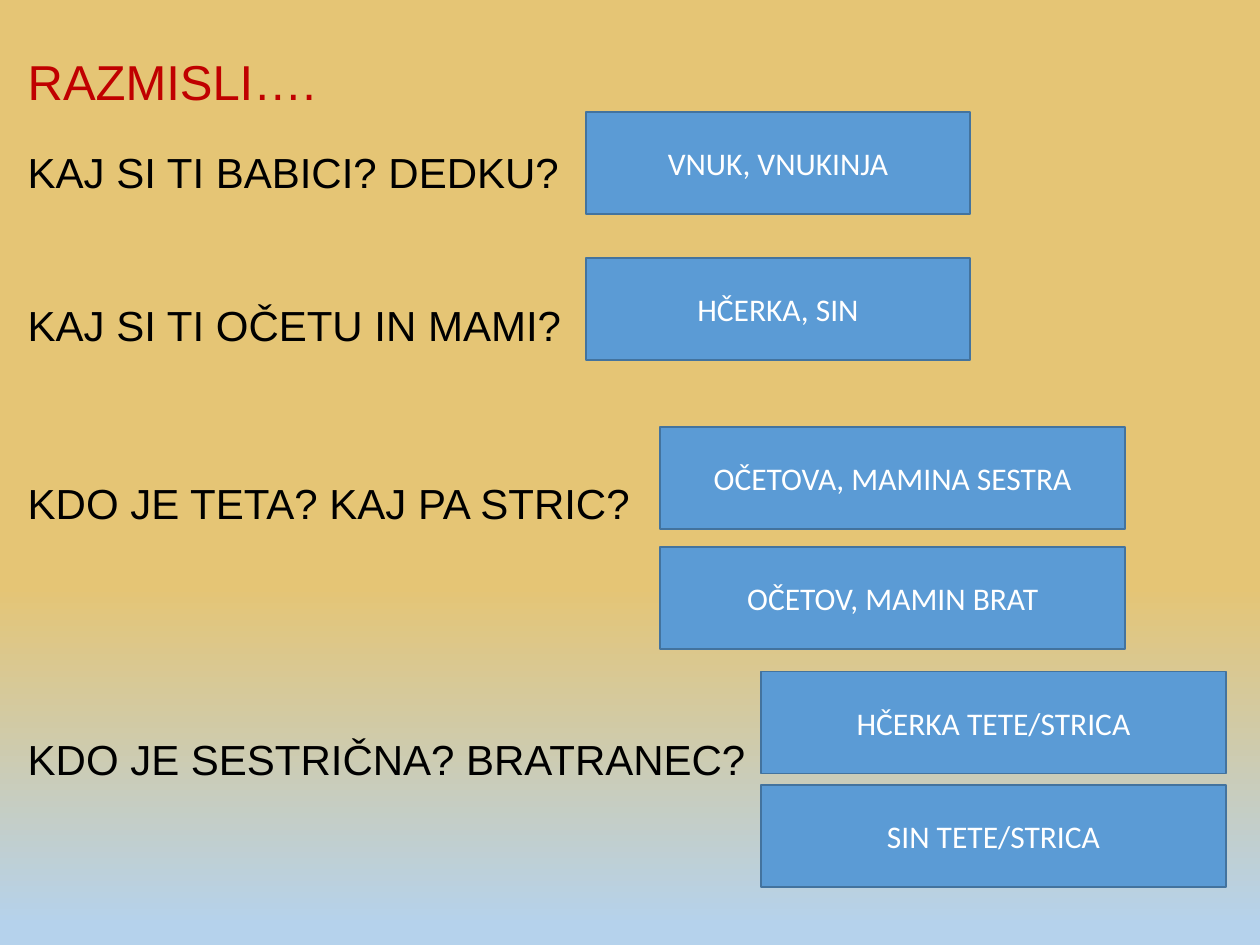
from pptx import Presentation
from pptx.dml.color import RGBColor
from pptx.enum.shapes import MSO_SHAPE as Shape
from pptx.enum.text import MSO_ANCHOR as Anchor, MSO_AUTO_SIZE as Fit, PP_ALIGN as Align
from pptx.oxml.ns import qn
from pptx.util import Inches, Pt

SAND = RGBColor(0xE5, 0xC5, 0x75)
SKY = RGBColor(0xB5, 0xD2, 0xEC)
RED = RGBColor(0xC0, 0x00, 0x00)
BLACK = RGBColor(0x00, 0x00, 0x00)
WHITE = RGBColor(0xFF, 0xFF, 0xFF)
BLUE = RGBColor(0x5B, 0x9B, 0xD5)
NAVY = RGBColor(0x43, 0x73, 0x9E)

# Question and the space before it in points
QUESTIONS = [
    ("KAJ SI TI BABICI? DEDKU?", 0),
    ("KAJ SI TI OČETU IN MAMI?", 58.6),
    ("KDO JE TETA? KAJ PA STRIC?", 73.2),
    ("KDO JE SESTRIČNA? BRATRANEC?", 117.2),
]
# Left, width and the answers with their tops, in inches
ANSWERS = [
    (4.65, 3.05, [("VNUK, VNUKINJA", 0.89), ("HČERKA, SIN", 2.05)]),
    (5.24, 3.69, [("OČETOVA, MAMINA SESTRA", 3.39), ("OČETOV, MAMIN BRAT", 4.34)]),
    (6.04, 3.69, [("HČERKA TETE/STRICA", 5.33), ("SIN TETE/STRICA", 6.23)]),
]
HEIGHT = 0.81


def set_font(para, name, size, color):
    para.font.name = name
    para.font.size = Pt(size)
    para.font.color.rgb = color


def paint_back(slide):
    fill = slide.background.fill
    fill.gradient()
    fill.gradient_angle = 270
    for stop, place, color in zip(fill.gradient_stops, (0.62, 0.98), (SAND, SKY)):
        stop.position = place
        stop.color.rgb = color


def place_holder(holder, left, top, width, height):
    """Move a placeholder and return its text frame, set to start at the top."""
    holder.left, holder.top = Inches(left), Inches(top)
    holder.width, holder.height = Inches(width), Inches(height)
    frame = holder.text_frame
    frame.word_wrap = True
    frame.auto_size = Fit.NONE
    frame.vertical_anchor = Anchor.TOP
    return frame


def add_title(slide):
    frame = place_holder(slide.shapes.title, 0.12, 0.36, 9.21, 0.57)
    frame.text = "RAZMISLI…."
    para = frame.paragraphs[0]
    para.alignment = Align.LEFT
    set_font(para, "Arial", 28, RED)


def add_questions(slide):
    frame = place_holder(slide.placeholders[1], 0.12, 1.11, 9.06, 5.15)
    frame.text = "\n".join(text for text, gap in QUESTIONS)
    for para, (text, gap) in zip(frame.paragraphs, QUESTIONS):
        props = para._p.get_or_add_pPr()
        props.set("marL", "0")
        props.set("indent", "0")
        props.append(props.makeelement(qn("a:buNone"), {}))
        para.space_before = Pt(gap)
        set_font(para, "Arial", 24, BLACK)


def add_answer(slide, text, left, top, width):
    box = slide.shapes.add_shape(
        Shape.RECTANGLE, Inches(left), Inches(top), Inches(width), Inches(HEIGHT))
    box.shadow.inherit = False
    box.fill.solid()
    box.fill.fore_color.rgb = BLUE
    box.line.color.rgb = NAVY
    box.line.width = Pt(1)
    frame = box.text_frame
    frame.word_wrap = True
    frame.vertical_anchor = Anchor.MIDDLE
    frame.text = text
    para = frame.paragraphs[0]
    para.alignment = Align.CENTER
    set_font(para, "Calibri", 18, WHITE)


def main():
    deck = Presentation()
    deck.slide_width, deck.slide_height = Inches(10), Inches(7.5)
    slide = deck.slides.add_slide(deck.slide_layouts[1])
    paint_back(slide)
    add_title(slide)
    add_questions(slide)
    for left, width, items in ANSWERS:
        for text, top in items:
            add_answer(slide, text, left, top, width)
    deck.save("out.pptx")


if __name__ == "__main__":
    main()
